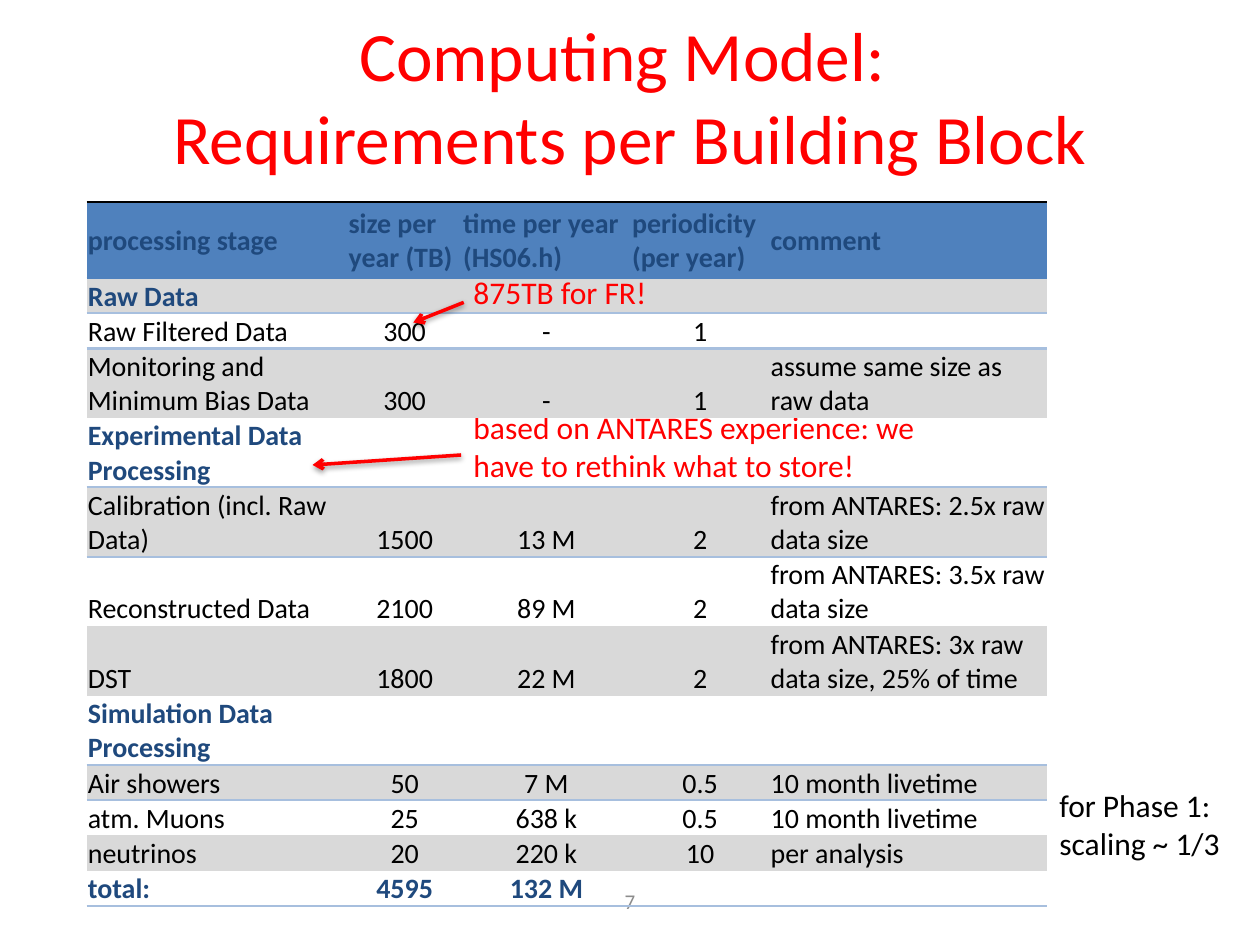
import pptx
import pptx.dml.color
import pptx.enum.shapes
import pptx.enum.text
import pptx.oxml
import pptx.oxml.ns
import pptx.util
from lxml import etree

Pt = pptx.util.Pt
ALIGN = pptx.enum.text.PP_ALIGN
ANCHOR = pptx.enum.text.MSO_ANCHOR
NS = pptx.oxml.ns.nsdecls("a")

RED, BLACK, NAVY, BLUE = "FF0000", "000000", "1F497D", "4F81BD"
PALE_BLUE, BAND, GRAY = "A7BFDE", "D9D9D9", "8C8C8C"

COLUMNS = [149, 65.5, 96.5, 79.2, 158.4]
HEADER_H, ONE_LINE, TWO_LINES = 43.4, 20.1, 39.7
ROWS = [
    (HEADER_H, ["processing stage", "size per year (TB)", "time per year (HS06.h)",
                "periodicity (per year)", "comment"]),
    (ONE_LINE, ["Raw Data", "", "", "", ""]),
    (ONE_LINE, ["Raw Filtered Data", "300", "-", "1", ""]),
    (TWO_LINES, ["Monitoring and Minimum Bias Data", "300", "-", "1",
                 "assume same size as raw data"]),
    (TWO_LINES, ["Experimental Data Processing", "", "", "", ""]),
    (TWO_LINES, ["Calibration (incl. Raw Data)", "1500", "13 M", "2",
                 "from ANTARES: 2.5x raw data size"]),
    (TWO_LINES, ["Reconstructed Data", "2100", "89 M", "2",
                 "from ANTARES: 3.5x raw data size"]),
    (TWO_LINES, ["DST", "1800", "22 M", "2",
                 "from ANTARES: 3x raw data size, 25% of time"]),
    (TWO_LINES, ["Simulation Data Processing", "", "", "", ""]),
    (ONE_LINE, ["Air showers", "50", "7 M", "0.5", "10 month livetime"]),
    (ONE_LINE, ["atm. Muons", "25", "638 k", "0.5", "10 month livetime"]),
    (ONE_LINE, ["neutrinos", "20", "220 k", "10", "per analysis"]),
    (ONE_LINE, ["total:", "4595", "132 M", "", ""]),
]
SECTION_ROWS = {1, 4, 8, 12}


def rgb(value):
    return pptx.dml.color.RGBColor.from_string(value)


class SlideBuilder:
    font = "Calibri"
    no_grid_style = "{2D5ABB26-0587-4C30-8999-92F81FD0307C}"

    def __init__(self, prs):
        self.s = prs.slides.add_slide(prs.slide_layouts[5])

    def style(self, p, size, color, bold=False, align=ALIGN.LEFT):
        p.alignment = align
        p.font.name = self.font
        p.font.size = Pt(size)
        p.font.bold = bold
        p.font.color.rgb = rgb(color)

    def title(self, text, x, y, w, h, size, color):
        sp = self.s.shapes.title
        sp.left, sp.top, sp.width, sp.height = Pt(x), Pt(y), Pt(w), Pt(h)
        tf = sp.text_frame
        tf.text = text
        tf.auto_size = pptx.enum.text.MSO_AUTO_SIZE.NONE
        tf.vertical_anchor = ANCHOR.MIDDLE
        self.style(tf.paragraphs[0], size, color, align=ALIGN.CENTER)

    def text(self, text, x, y, w, h, size, color, align=ALIGN.LEFT, anchor=ANCHOR.TOP):
        tf = self.s.shapes.add_textbox(Pt(x), Pt(y), Pt(w), Pt(h)).text_frame
        tf.word_wrap = True
        tf.vertical_anchor = anchor
        tf.text = text
        for p in tf.paragraphs:
            self.style(p, size, color, align=align)

    def arrow(self, x1, y1, x2, y2, color, width):
        sp = self.s.shapes.add_connector(
            pptx.enum.shapes.MSO_CONNECTOR.STRAIGHT, Pt(x1), Pt(y1), Pt(x2), Pt(y2))
        sp.line.color.rgb = rgb(color)
        sp.line.width = Pt(width)
        etree.SubElement(sp.line._get_or_add_ln(), pptx.oxml.ns.qn("a:tailEnd"), type="arrow")
        sp._element.spPr.append(pptx.oxml.parse_xml(
            f'<a:effectLst {NS}><a:outerShdw blurRad="{Pt(3.1)}" dist="{Pt(1.6)}" '
            'dir="5400000" rotWithShape="0"><a:srgbClr val="000000">'
            '<a:alpha val="38000"/></a:srgbClr></a:outerShdw></a:effectLst>'))

    def border(self, cell, side, color, width):
        cell._tc.get_or_add_tcPr().append(pptx.oxml.parse_xml(
            f'<a:ln{side} {NS} w="{Pt(width)}"><a:solidFill>'
            f'<a:srgbClr val="{color}"/></a:solidFill></a:ln{side}>'))

    def cell(self, cell, text, size, color, bold, align, anchor, fill):
        cell.margin_left = cell.margin_right = cell.margin_top = Pt(0.75)
        cell.margin_bottom = 0
        cell.vertical_anchor = anchor
        if fill:
            cell.fill.solid()
            cell.fill.fore_color.rgb = rgb(fill)
        else:
            cell.fill.background()
        cell.text = text
        p = cell.text_frame.paragraphs[0]
        self.style(p, size, color, bold, align)
        if not text:
            p._p.get_or_add_endParaRPr().set("sz", str(size * 100))

    def table(self, x, y, columns, rows, size):
        total_h = sum(h for h, _ in rows)
        frame = self.s.shapes.add_table(
            len(rows), len(columns), Pt(x), Pt(y), Pt(sum(columns)), Pt(total_h))
        tbl = frame.table
        tbl.first_row = tbl.horz_banding = False
        tbl._tbl.tblPr.find(pptx.oxml.ns.qn("a:tableStyleId")).text = self.no_grid_style
        for column, width in zip(tbl.columns, columns):
            column.width = Pt(width)
        rules = {r + 1: (PALE_BLUE, 1.5) for r in SECTION_ROWS}
        rules.update({0: (BLACK, 1), 1: (BLUE, 1.5)})
        for r, (height, texts) in enumerate(rows):
            tbl.rows[r].height = Pt(height)
            header = r == 0
            strong = header or r in SECTION_ROWS
            fill = BLUE if header else BAND if r % 2 else None
            anchor = ANCHOR.MIDDLE if header else ANCHOR.BOTTOM
            for c, text in enumerate(texts):
                cell = tbl.cell(r, c)
                for side, edge in (("T", r), ("B", r + 1)):
                    if edge in rules:
                        self.border(cell, side, *rules[edge])
                centred = not header and 1 <= c <= 3
                align = ALIGN.CENTER if centred else ALIGN.LEFT
                self.cell(cell, text, size, NAVY if strong else BLACK, strong,
                          align, anchor, fill)


def main():
    prs = pptx.Presentation()
    prs.slide_width, prs.slide_height = Pt(720), Pt(540)
    b = SlideBuilder(prs)
    b.title("Computing Model: \vRequirements per Building Block", 36, 9.4, 648, 90, 39.6, RED)
    b.text("7", 246, 500.5, 228, 28.8, 12, GRAY, ALIGN.CENTER, ANCHOR.MIDDLE)
    b.text("based on ANTARES experience: we have to rethink what to store!",
           263.5, 229.7, 283.7, 51.8, 18, RED)
    b.table(49.5, 115.5, COLUMNS, ROWS, 16)
    b.arrow(263.5, 260, 178.6, 265.7, RED, 2)
    b.text("875TB for FR!", 263.5, 152.6, 198.7, 29.5, 18, RED)
    b.arrow(265, 172.8, 236.2, 184.3, RED, 2)
    b.text("for Phase 1:\nscaling ~ 1/3", 598.3, 445.7, 124.6, 51.8, 18, BLACK)
    prs.save("out.pptx")


if __name__ == "__main__":
    main()
